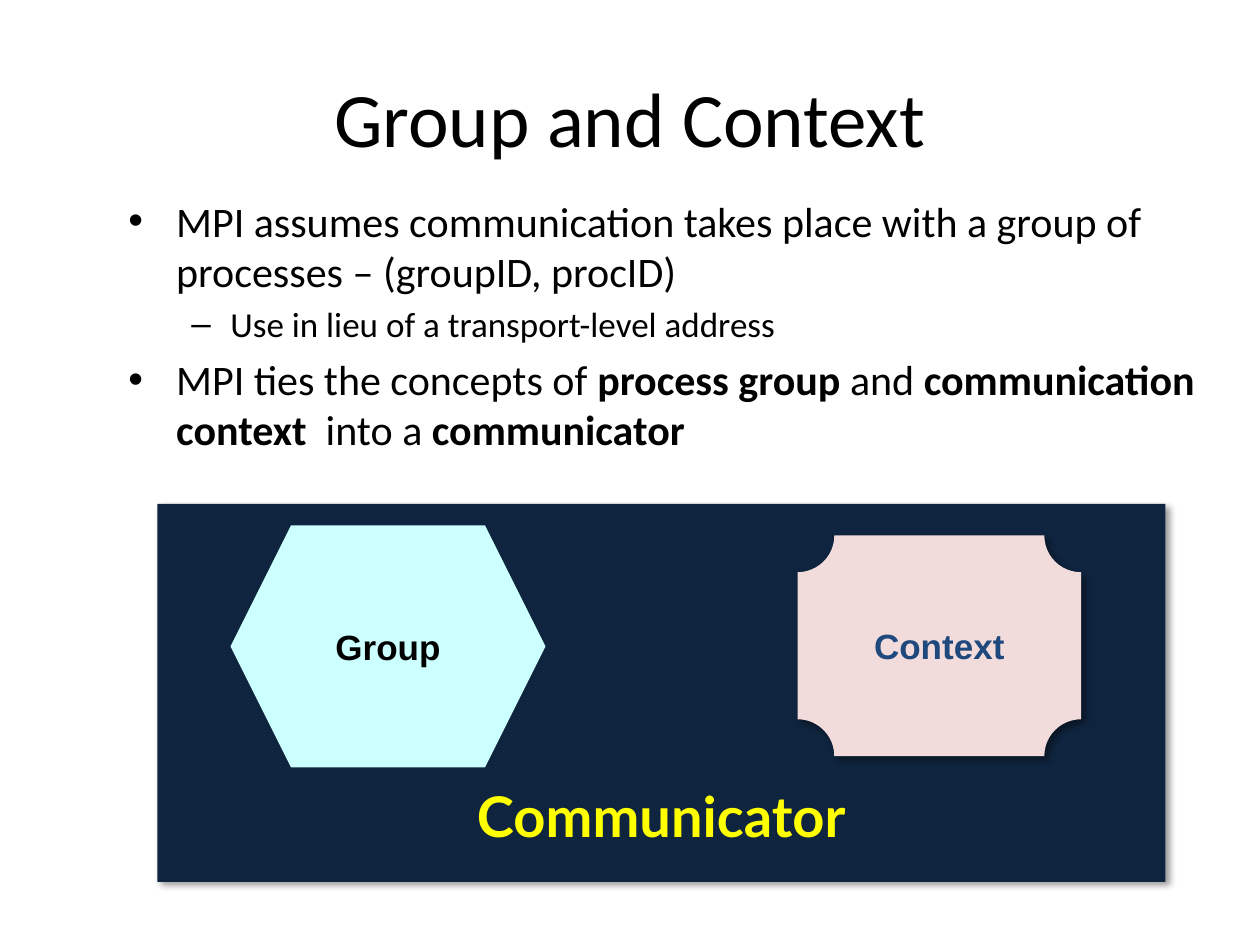
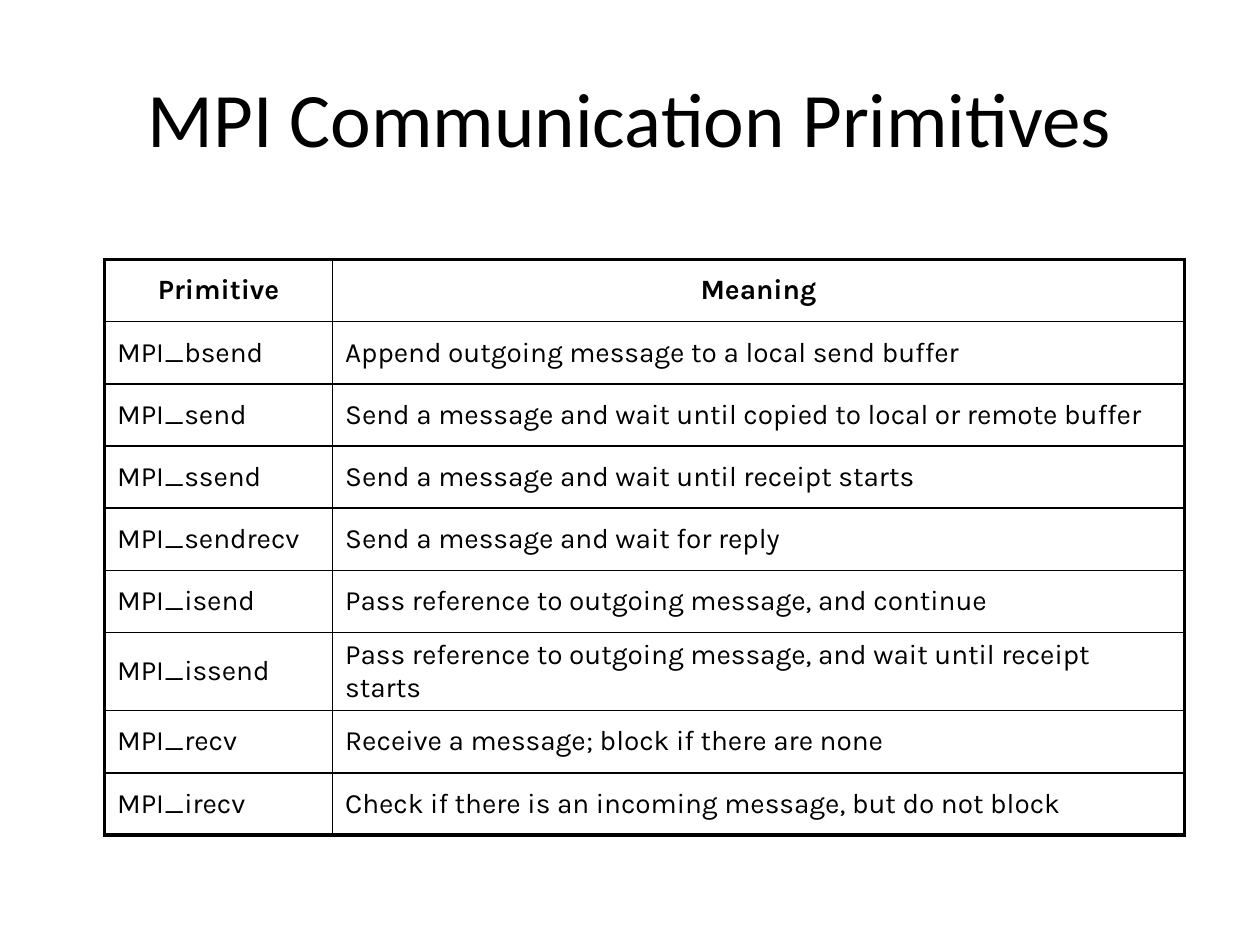
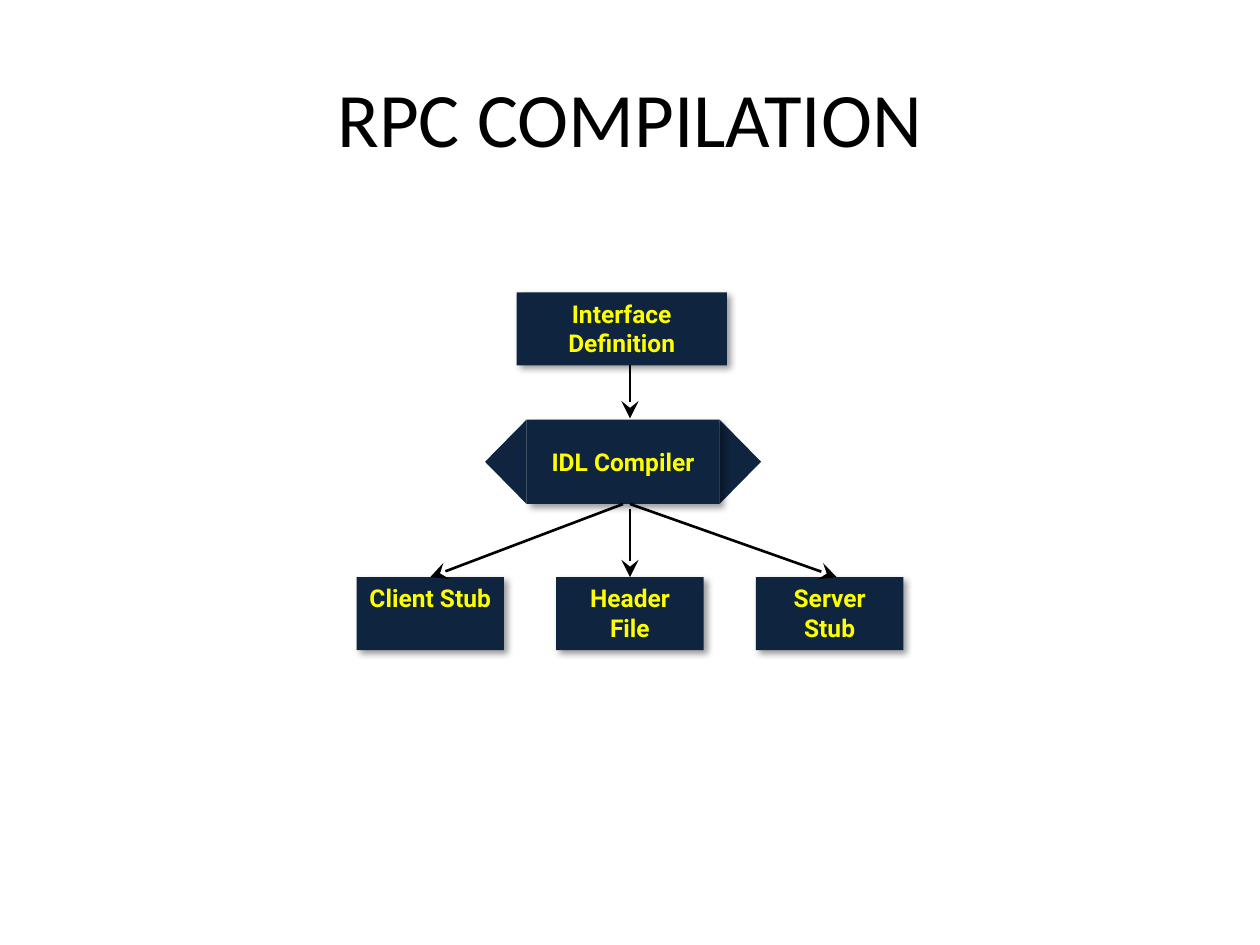
from lxml import etree
from pptx import Presentation, util as u
from pptx.dml.color import RGBColor
from pptx.enum import shapes, text
from pptx.oxml import parse_xml
from pptx.oxml.ns import nsdecls, qn

NAVY, YELLOW, BLACK = "0F243E", "FFFF00", "000000"
COLOUR = RGBColor.from_string
SHADOW = (f'<a:outerShdw {nsdecls("a")} blurRad="{u.Pt(4)}" dist="{u.Pt(3)}" dir="2700000" '
          f'rotWithShape="0"><a:srgbClr val="{BLACK}"><a:alpha val="40000"/></a:srgbClr></a:outerShdw>')


def style(paragraph, size, face, colour=BLACK, bold=None, align=None):
    font = paragraph.font
    font.size, font.name, font.bold = u.Pt(size), face, bold
    font.color.rgb = COLOUR(colour)
    paragraph.alignment = align


def block(slide, kind, box, fill, label="", size=14, face="Roboto", colour=YELLOW,
          anchor=text.MSO_ANCHOR.MIDDLE, shadow=True):
    shape = slide.shapes.add_shape(kind, *map(u.Inches, box))
    shape.fill.solid()
    shape.fill.fore_color.rgb = COLOUR(fill)
    shape.line.fill.background()
    shape.shadow.inherit = False
    if shadow:
        shape._element.spPr.find(qn("a:effectLst")).append(parse_xml(SHADOW))
    if label:
        shape.text_frame.text = label
        shape.text_frame.vertical_anchor = anchor
        style(shape.text_frame.paragraphs[0], size, face, colour, True, text.PP_ALIGN.CENTER)
    return shape


KIND = shapes.MSO_SHAPE
prs = Presentation()
prs.slide_width, prs.slide_height = u.Inches(10), u.Inches(7.5)

# Slides with their shared title style
slides = []
for heading in ["Group and Context", "MPI Communication Primitives", "RPC COMPILATION"]:
    slide = prs.slides.add_slide(prs.slide_layouts[5])
    title = slide.shapes.title
    title.left, title.top, title.width, title.height = map(u.Inches, (0.5, 0.3, 9, 1.25))
    title.text_frame.text = heading
    title.text_frame.vertical_anchor = text.MSO_ANCHOR.MIDDLE
    style(title.text_frame.paragraphs[0], 44, "Calibri", align=text.PP_ALIGN.CENTER)
    slides.append(slide)
context_slide, primitives_slide, rpc_slide = slides

# Slide 1: bullets, each run as (wording, bold)
points = [
    (0, [("MPI assumes communication takes place with a group of processes – (groupID, procID)", False)]),
    (1, [("Use in lieu of a transport-level address", False)]),
    (0, [("MPI ties the concepts of ", False), ("process group ", True), ("and ", False),
         ("communication context  ", True), ("into a ", False), ("communicator", True)]),
]
levels = [("•", 24, 0.38, -0.38), ("–", 20, 0.81, -0.31)]
body = context_slide.shapes.add_textbox(*map(u.Inches, (0.92, 1.5, 8.88, 2.4))).text_frame
body.word_wrap = True
for i, (level, runs) in enumerate(points):
    mark, size, margin, indent = levels[level]
    point = body.add_paragraph() if i else body.paragraphs[0]
    point.level = level
    point.space_before = u.Pt(size * 0.2)
    props = point._p.get_or_add_pPr()
    props.set("marL", str(u.Inches(margin)))
    props.set("indent", str(u.Inches(indent)))
    etree.SubElement(props, qn("a:buFont"), typeface="Arial")
    etree.SubElement(props, qn("a:buChar"), char=mark)
    style(point, size, "Calibri")
    for wording, bold in runs:
        run = point.add_run()
        run.text, run.font.bold = wording, bold

# Slide 1: communicator holding group and context
communicator = block(context_slide, KIND.RECTANGLE, (1.25, 4, 8, 3), NAVY, "Communicator",
                     32, "Lato", anchor=text.MSO_ANCHOR.BOTTOM)
communicator.text_frame.margin_bottom = u.Inches(0.26)
block(context_slide, KIND.HEXAGON, (1.83, 4.17, 2.5, 1.92), "CCFFFF", "Group",
      20, "Arial", BLACK, shadow=False)
block(context_slide, KIND.PLAQUE, (6.33, 4.25, 2.25, 1.75), "F2DCDB", "Context",
      20, "Arial", "1F497D")

# Slide 2: table with a heavy frame and thin inner rules
primitives = [
    ("Primitive", "Meaning"),
    ("MPI_bsend", "Append outgoing message to a local send buffer"),
    ("MPI_send", "Send a message and wait until copied to local or remote buffer"),
    ("MPI_ssend", "Send a message and wait until receipt starts"),
    ("MPI_sendrecv", "Send a message and wait for reply"),
    ("MPI_isend", "Pass reference to outgoing message, and continue"),
    ("MPI_issend", "Pass reference to outgoing message, and wait until receipt starts"),
    ("MPI_recv", "Receive a message; block if there are none"),
    ("MPI_irecv", "Check if there is an incoming message, but do not block"),
]
last = len(primitives) - 1
table = primitives_slide.shapes.add_table(
    len(primitives), 2, *map(u.Inches, (0.83, 2.06, 8.57, 4.44))).table
table.horz_banding = False
for column, width in zip(table.columns, (1.81, 6.76)):
    column.width = u.Inches(width)
for r, row in enumerate(primitives):
    for c, wording in enumerate(row):
        cell = table.cell(r, c)
        cell.text = wording
        cell.vertical_anchor = text.MSO_ANCHOR.MIDDLE
        paragraph = cell.text_frame.paragraphs[0]
        paragraph.space_before = u.Pt(16 * 0.2)
        style(paragraph, 16, "Karla", bold=r == 0,
              align=text.PP_ALIGN.CENTER if r == 0 else text.PP_ALIGN.LEFT)
        outer = {"L": c == 0, "R": c == 1, "T": r == 0, "B": r == last}
        for side, heavy in outer.items():
            cell._tc.get_or_add_tcPr().append(parse_xml(
                f'<a:ln{side} {nsdecls("a")} w="{u.Pt(2.25 if heavy else 1)}"><a:solidFill>'
                f'<a:srgbClr val="{BLACK}"/></a:solidFill></a:ln{side}>'))
        cell.fill.background()

# Slide 3: interface definition and the row of generated files
TOP = text.MSO_ANCHOR.TOP
block(rpc_slide, KIND.RECTANGLE, (4.1, 2.32, 1.67, 0.58), NAVY, "Interface Definition", anchor=TOP)
outputs = [block(rpc_slide, KIND.RECTANGLE, (2.83 + 1.585 * i, 4.58, 1.17, 0.58), NAVY, label, anchor=TOP)
           for i, label in enumerate(["Client Stub", "Header File", "Server Stub"])]
client_stub, header_file, server_stub = outputs

# Slide 3: compiler with a point on each side
for left, turn in [(3.68, 270), (5.54, 90)]:
    point = block(rpc_slide, KIND.ISOSCELES_TRIANGLE, (left, 3.5, 0.67, 0.33), NAVY, shadow=False)
    point.rotation = turn
compiler = block(rpc_slide, KIND.RECTANGLE, (4.18, 3.33, 1.53, 0.67), NAVY, "IDL Compiler")

# Slide 3: arrows as start, end, and the blocks they join
arrows = [
    ((5, 2.9), (5, 3.32), None, None),
    ((5, 4), (6.64, 4.58), None, None),
    ((5, 4.04), (5, 4.58), None, header_file),
    ((4.94, 4), (3.42, 4.58), compiler, client_stub),
]
for start, end, source, target in arrows:
    arrow = rpc_slide.shapes.add_connector(shapes.MSO_CONNECTOR.STRAIGHT, *map(u.Inches, start + end))
    if source:
        arrow.begin_connect(source, 2)
    if target:
        arrow.end_connect(target, 0)
    arrow.line.width = u.Pt(1.5)
    arrow.line.color.rgb = COLOUR(BLACK)
    etree.SubElement(arrow.line._get_or_add_ln(), qn("a:tailEnd"), type="stealth", w="lg", len="lg")
    etree.SubElement(arrow._element.spPr, qn("a:effectLst"))

prs.save("out.pptx")
